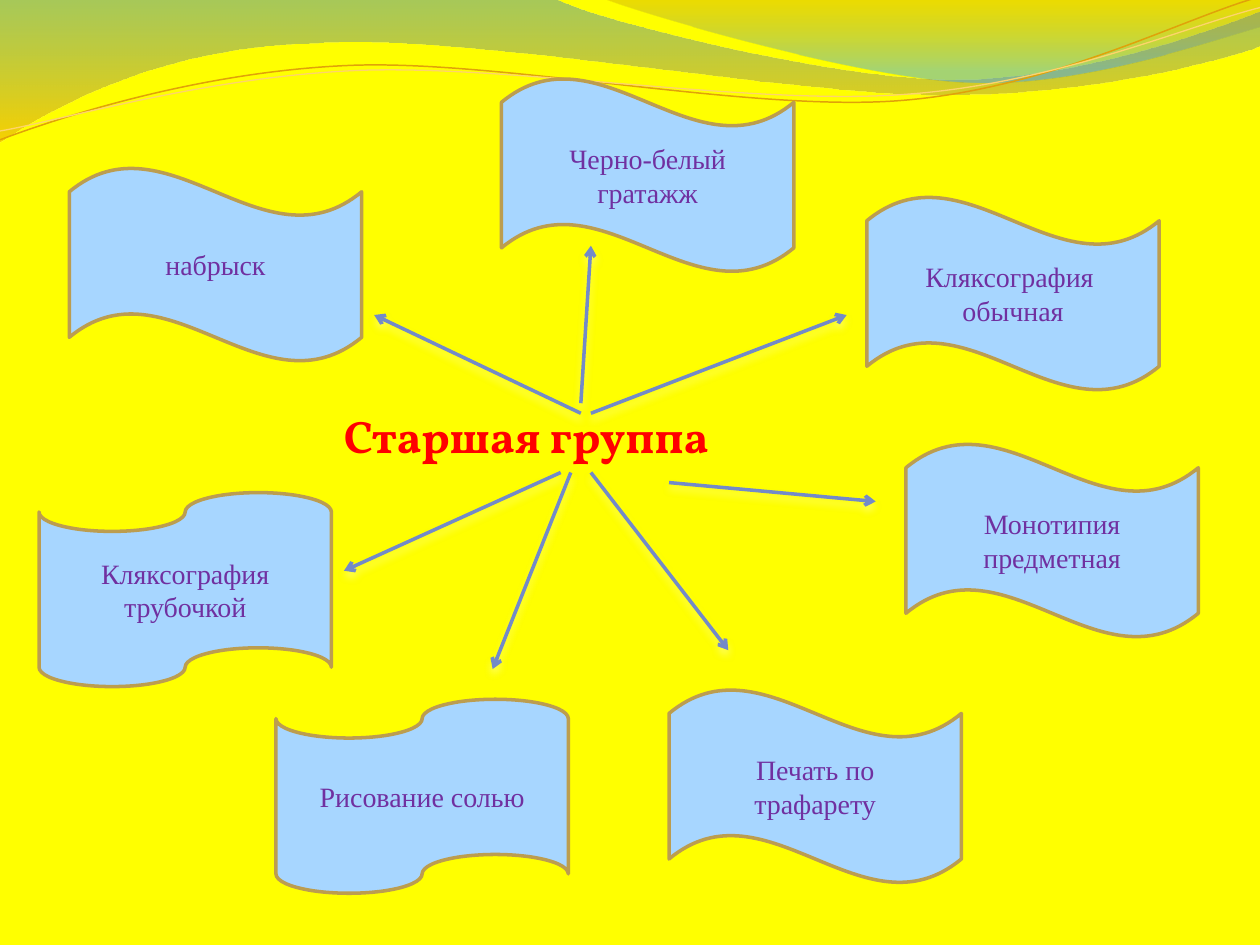
from dataclasses import dataclass
from typing import Optional

from lxml.etree import SubElement
from pptx import Presentation
from pptx.dml.color import RGBColor
from pptx.enum.shapes import MSO_CONNECTOR as CONN, MSO_SHAPE as MS
from pptx.enum.text import MSO_ANCHOR as ANCHOR, PP_ALIGN as ALIGN
from pptx.oxml import parse_xml
from pptx.oxml.ns import nsdecls, qn
from pptx.util import Inches, Pt

YELLOW = RGBColor(0xFF, 0xFF, 0x00)
RED = RGBColor(0xFF, 0x00, 0x00)
PURPLE = RGBColor(0x70, 0x30, 0xA0)
SKY = RGBColor(0xA7, 0xD6, 0xFF)
TAN = RGBColor(0xBC, 0x9D, 0x4F)
SLATE = RGBColor(0x73, 0x8A, 0xC8)
BLUE = RGBColor(0x3B, 0x87, 0xC8)
AMBER = RGBColor(0xF0, 0xAB, 0x00)
OCHRE = RGBColor(0xC3, 0x8B, 0x00)
AZURE = RGBColor(0x39, 0xA2, 0xFD)
ORANGE = RGBColor(0xE0, 0xA2, 0x09)
CREAM = RGBColor(0xFE, 0xD4, 0x6B)
GLOW = RGBColor(0xFF, 0xFF, 0xC0)

LABEL_FONT = {"name": "Times New Roman", "size": Pt(16)}
TITLE_FONT = {"name": "Vollkorn", "size": Pt(26), "bold": True}
FLAG_W, FLAG_H = 2.32, 1.54
SHADOW = (
    f'<a:effectLst {nsdecls("a")}><a:outerShdw blurRad="57150" dist="38100" dir="5400000" '
    f'rotWithShape="0"><a:srgbClr val="{GLOW}"><a:alpha val="48000"/></a:srgbClr>'
    "</a:outerShdw></a:effectLst>"
)


@dataclass
class Stop:
    position: float
    color: RGBColor
    alpha: int


@dataclass
class Ribbon:
    start: tuple
    segments: list
    stops: Optional[list] = None
    line: Optional[RGBColor] = None
    width: float = 0


@dataclass
class Flag:
    left: float
    top: float
    lines: list
    kind: MS = MS.WAVE


@dataclass
class Arrow:
    start: tuple
    end: tuple


RIBBONS = [
    Ribbon((0, 0), [
        (4.4, -0.01),
        (4.76, 0.17, 6.64, 0.63, 7.58, 0.63),
        (8.53, 0.63, 9.58, 0.26, 10, 0.09),
        (10.01, 0.36),
        (9.83, 0.44, 8.7, 0.76, 7.46, 0.75),
        (6.22, 0.75, 3.82, 0.28, 2.57, 0.34),
        (1.29, 0.36, 0.46, 0.83, -0.01, 1.13),
    ], stops=[Stop(0, BLUE, 45), Stop(1, AMBER, 55)]),
    Ribbon((4.79, -0.01), [
        (5.09, 0.11, 6.82, 0.62, 7.69, 0.65),
        (8.56, 0.69, 9.61, 0.32, 10, 0.21),
        (10, 0),
    ], stops=[Stop(0, OCHRE, 30), Stop(0.8, AZURE, 45)]),
    Ribbon((0, 1.11), [
        (0.48, 0.93, 1.58, 0.57, 2.77, 0.52),
        (3.95, 0.47, 5.93, 0.89, 7.13, 0.8),
        (8.33, 0.71, 9.38, 0.15, 9.98, -0.02),
    ], line=ORANGE, width=0.85),
    Ribbon((0, 1.04), [
        (0.47, 0.96, 1.64, 0.61, 2.83, 0.56),
        (4.03, 0.51, 5.97, 0.84, 7.17, 0.75),
        (8.36, 0.67, 9.41, 0.21, 10, 0.06),
    ], line=CREAM, width=0.75),
]
FLAGS = [
    Flag(0.55, 1.33, ["набрыск"]),
    Flag(3.98, 0.62, ["Черно-белый", "гратажж"]),
    Flag(6.88, 1.56, ["Кляксография ", "обычная"]),
    Flag(7.19, 3.52, ["Монотипия предметная"]),
    Flag(5.31, 5.47, ["Печать по", "трафарету"]),
    Flag(2.19, 5.55, ["Рисование солью"], MS.FLOWCHART_PUNCHED_TAPE),
    Flag(0.31, 3.91, ["Кляксография", "трубочкой"], MS.FLOWCHART_PUNCHED_TAPE),
]
ARROWS = [
    Arrow((4.61, 3.2), (4.69, 1.95)),
    Arrow((4.61, 3.28), (2.97, 2.5)),
    Arrow((4.69, 3.28), (6.72, 2.5)),
    Arrow((4.45, 3.75), (2.73, 4.53)),
    Arrow((4.53, 3.75), (3.91, 5.31)),
    Arrow((4.69, 3.75), (5.78, 5.16)),
    Arrow((5.31, 3.83), (6.95, 3.98)),
]


def bend(sp, segments: list) -> None:
    """Merge each run of three control points into one cubic curve."""
    steps = iter(list(sp._element.spPr.iter(qn("a:lnTo"))))
    for seg in segments:
        first, *others = [next(steps) for _ in range(len(seg) // 2)]
        if others:
            first.tag = qn("a:cubicBezTo")
        for step in others:
            first.append(step[0])
            step.getparent().remove(step)


def add_ribbon(shapes, ribbon: Ribbon) -> None:
    """Draw a gradient band or a thin curve."""
    builder = shapes.build_freeform(*map(Inches, ribbon.start))
    points = [
        (Inches(x), Inches(y))
        for seg in ribbon.segments
        for x, y in zip(seg[::2], seg[1::2])
    ]
    builder.add_line_segments(points, close=ribbon.stops is not None)
    sp = builder.convert_to_shape()
    bend(sp, ribbon.segments)
    sp.shadow.inherit = False
    if ribbon.stops is None:
        sp.fill.background()
        sp.line.color.rgb = ribbon.line
        sp.line.width = Pt(ribbon.width)
        return
    sp.line.fill.background()
    sp.fill.gradient()
    sp.fill.gradient_angle = 270
    for gs, stop in zip(sp.fill.gradient_stops, ribbon.stops):
        gs.position = stop.position
        gs.color.rgb = stop.color
    for clr, stop in zip(sp._element.spPr.iter(qn("a:srgbClr")), ribbon.stops):
        SubElement(clr, qn("a:alpha")).set("val", str(stop.alpha * 1000))


def write(tf, lines: list, align: ALIGN, color: RGBColor, fmt: dict) -> None:
    """Fill a text frame with one paragraph per line."""
    for i, text in enumerate(lines):
        p = tf.add_paragraph() if i else tf.paragraphs[0]
        p.alignment = align
        r = p.add_run()
        r.text = text
        r.font.color.rgb = color
        for name, value in fmt.items():
            setattr(r.font, name, value)


def add_flag(shapes, flag: Flag) -> None:
    """Draw a waving flag with its label."""
    sp = shapes.add_shape(flag.kind, *map(Inches, (flag.left, flag.top, FLAG_W, FLAG_H)))
    sp.shadow.inherit = False
    sp.fill.solid()
    sp.fill.fore_color.rgb = SKY
    sp.line.color.rgb = TAN
    sp.line.width = Pt(2)
    sp.text_frame.vertical_anchor = ANCHOR.MIDDLE
    write(sp.text_frame, flag.lines, ALIGN.CENTER, PURPLE, LABEL_FONT)


def add_title(shapes, text: str) -> None:
    """Place the central heading."""
    tf = shapes.add_textbox(*map(Inches, (2.73, 3.24, 3.2, 0.5))).text_frame
    tf.word_wrap = True
    for side in ("left", "top", "right", "bottom"):
        setattr(tf, f"margin_{side}", 0)
    write(tf, [text], ALIGN.LEFT, RED, TITLE_FONT)


def add_arrow(shapes, arrow: Arrow) -> None:
    """Draw an arrow with a soft pale shadow."""
    cn = shapes.add_connector(CONN.STRAIGHT, *map(Inches, arrow.start + arrow.end))
    cn.line.color.rgb = SLATE
    cn.line.width = Pt(2)
    SubElement(cn.line._get_or_add_ln(), qn("a:tailEnd")).set("type", "arrow")
    cn._element.spPr.append(parse_xml(SHADOW))


def main() -> None:
    """Build the slide of drawing techniques."""
    prs = Presentation()
    prs.slide_width, prs.slide_height = Inches(10), Inches(7.5)
    s = prs.slides.add_slide(prs.slide_layouts[6])
    s.background.fill.solid()
    s.background.fill.fore_color.rgb = YELLOW
    for ribbon in RIBBONS:
        add_ribbon(s.shapes, ribbon)
    add_title(s.shapes, "Старшая группа")
    for flag in FLAGS:
        add_flag(s.shapes, flag)
    for arrow in ARROWS:
        add_arrow(s.shapes, arrow)
    prs.save("out.pptx")


if __name__ == "__main__":
    main()
